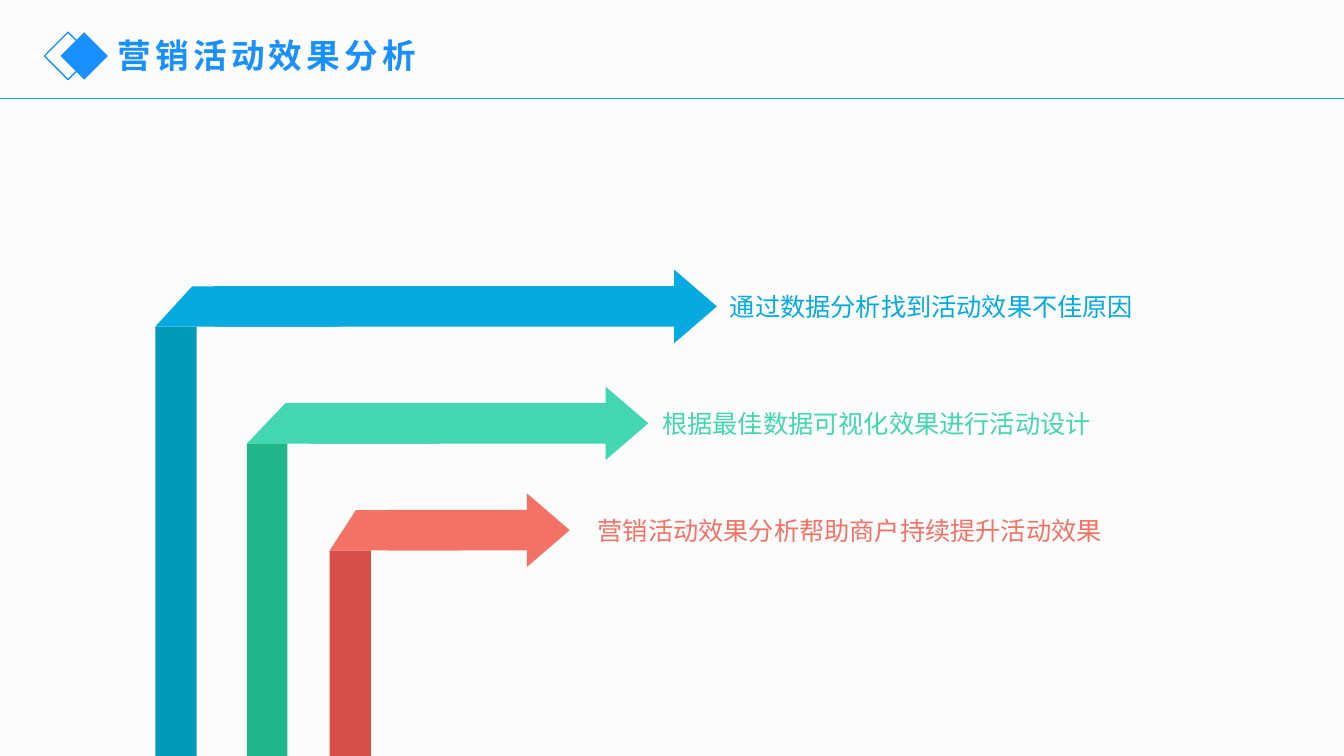
import pptx
import pptx.dml.color
import pptx.enum.shapes
import pptx.oxml
import pptx.oxml.ns
import pptx.util

SHAPE = pptx.enum.shapes.MSO_SHAPE
WIDTH, HEIGHT = 13.33, 7.5
FONT = "Noto Sans CJK SC"
COLOURS = {
    "background": "FCFCFC", "rule": "00ADFF", "title": "1890FF",
    "blue": "05AAE0", "dark blue": "0099B9",
    "green": "42D6B1", "dark green": "1FB68A",
    "red": "F37265", "dark red": "D74F49",
}
BAND = 0.4          # thickness of an arrow's shaft
ARROW_HEIGHT = 0.73

# colour, bar left, bar top, bar width, fold width, arrow left, arrow tip,
# label left, label width, label
ARROWS = [
    ("blue", 1.54, 3.24, 0.41, 1.83, 2.12, 7.11, 7.14, 4.69,
     "通过数据分析找到活动效果不佳原因"),
    ("green", 2.45, 4.4, 0.4, 1.9, 3.06, 6.43, 6.47, 4.69,
     "根据最佳数据可视化效果进行活动设计"),
    ("red", 3.27, 5.46, 0.41, 1.3, 3.84, 5.65, 5.83, 5.84,
     "营销活动效果分析帮助商户持续提升活动效果"),
]


def inches(*lengths):
    return [pptx.util.Inches(length) for length in lengths]


def rgb(colour):
    return pptx.dml.color.RGBColor.from_string(COLOURS[colour])


def add_shape(shapes, kind, box, fill=None, line=None):
    shape = shapes.add_shape(kind, *inches(*box))
    shape.shadow.inherit = False
    if fill:
        shape.fill.solid()
        shape.fill.fore_color.rgb = rgb(fill)
    else:
        shape.fill.background()
    if line:
        shape.line.color.rgb = rgb(line)
        shape.line.width = pptx.util.Pt(1)
    else:
        shape.line.fill.background()
    return shape


def add_text(shapes, box, text, size, colour, bold=False, spacing=0):
    """Add one line of text; spacing is the letter spacing in points."""
    frame = shapes.add_textbox(*inches(*box)).text_frame
    frame.word_wrap = True
    para = frame.paragraphs[0]
    para.text = text
    font = para.font
    font.size = pptx.util.Pt(size)
    font.bold = bold
    font.color.rgb = rgb(colour)
    font.name = FONT
    qn = pptx.oxml.ns.qn
    properties = para._p.pPr.find(qn("a:defRPr"))
    east_asian = pptx.oxml.parse_xml(
        f'<a:ea {pptx.oxml.ns.nsdecls("a")} typeface="{FONT}"/>')
    properties.find(qn("a:latin")).addnext(east_asian)
    if spacing:
        # Letter spacing and the East Asian face take effect on the run
        run_properties = para.runs[0]._r.get_or_add_rPr()
        run_properties.set("spc", str(spacing * 100))


def add_header(shapes, left, top, width, height):
    rule = shapes.add_connector(
        pptx.enum.shapes.MSO_CONNECTOR.STRAIGHT,
        *inches(left, top + height, left + width, top + height))
    rule.line.color.rgb = rgb("rule")
    rule.line.width = pptx.util.Pt(1)
    rule._element.spPr.append(pptx.oxml.parse_xml(
        f'<a:effectLst {pptx.oxml.ns.nsdecls("a")}/>'))
    side = 0.47
    icon_top = top + 0.32
    add_shape(shapes, SHAPE.DIAMOND, (left + 0.44, icon_top, side, side), line="title")
    add_shape(shapes, SHAPE.DIAMOND, (left + 0.6, icon_top, side, side), fill="title")
    add_text(shapes, (left + 1.07, top + 0.3, 5.49, 0.5),
             "营销活动效果分析", 24, "title", bold=True, spacing=3)


def add_folded_arrow(shapes, bottom, colour, left, top, bar_width, fold_width,
                     arrow_left, tip, label_left, label_width, label):
    """Add a bar rising from bottom to top, folded into an arrow with a label."""
    add_text(shapes, (label_left, top - BAND, label_width, BAND), label, 18, colour)
    add_shape(shapes, SHAPE.RECTANGLE, (left, top, bar_width, bottom - top),
              fill="dark " + colour)
    bent = shapes.add_group_shape().shapes
    arrow_top = top - (BAND + ARROW_HEIGHT) / 2
    arrow = add_shape(bent, SHAPE.RIGHT_ARROW,
                      (arrow_left, arrow_top, tip - arrow_left, ARROW_HEIGHT),
                      fill=colour)
    arrow.adjustments[0] = 0.55
    arrow.adjustments[1] = 0.58
    fold = add_shape(bent, SHAPE.FLOWCHART_MANUAL_OPERATION,
                     (left, top - BAND, fold_width, BAND), fill=colour)
    fold.rotation = 180


def main():
    deck = pptx.Presentation()
    deck.slide_width, deck.slide_height = inches(WIDTH, HEIGHT)
    page = deck.slides.add_slide(deck.slide_layouts[6])
    page.background.fill.solid()
    page.background.fill.fore_color.rgb = rgb("background")
    add_header(page.shapes, 0, 0, WIDTH, 0.98)
    for arrow in ARROWS:
        add_folded_arrow(page.shapes, HEIGHT, *arrow)
    deck.save("out.pptx")


if __name__ == "__main__":
    main()
